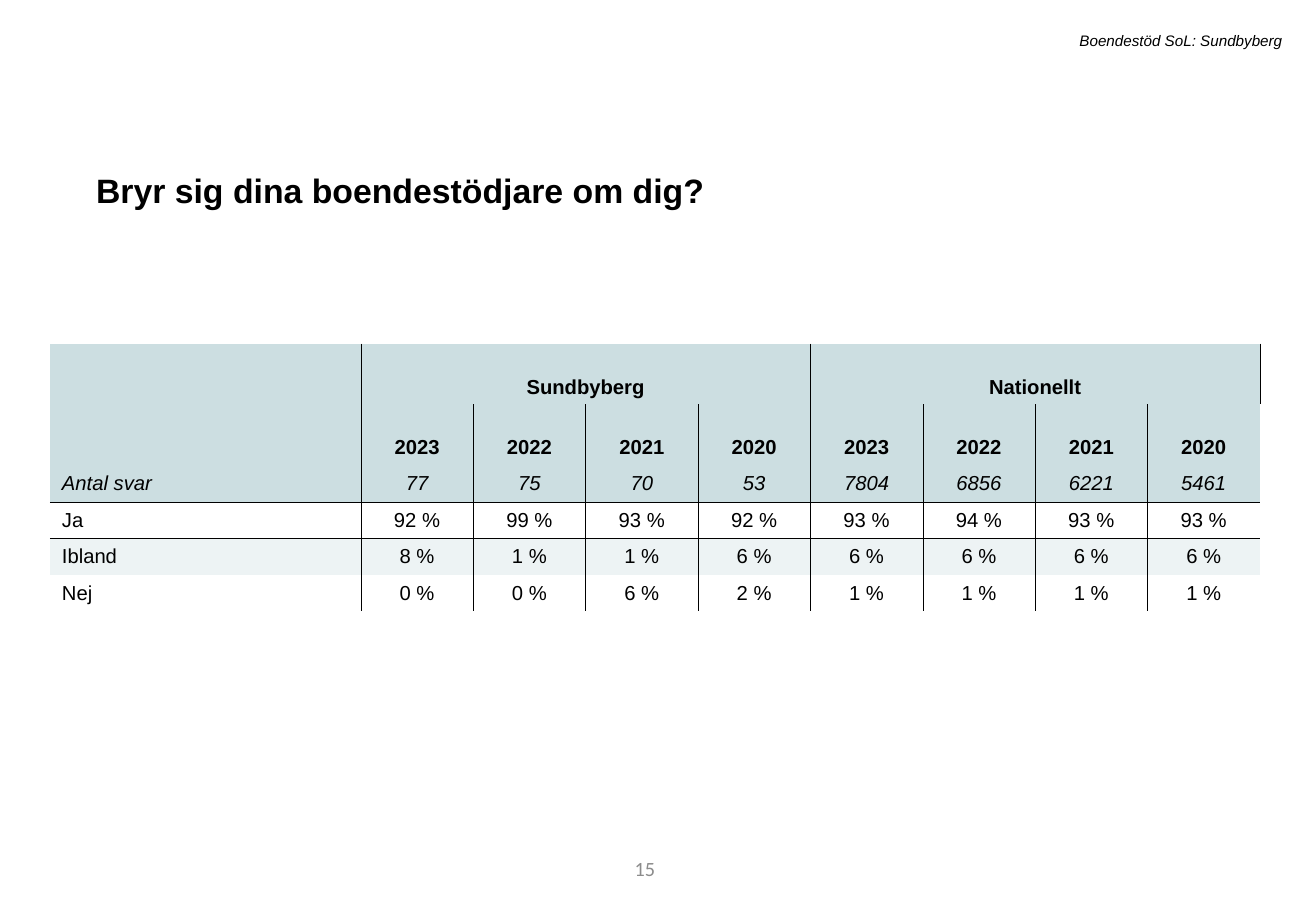
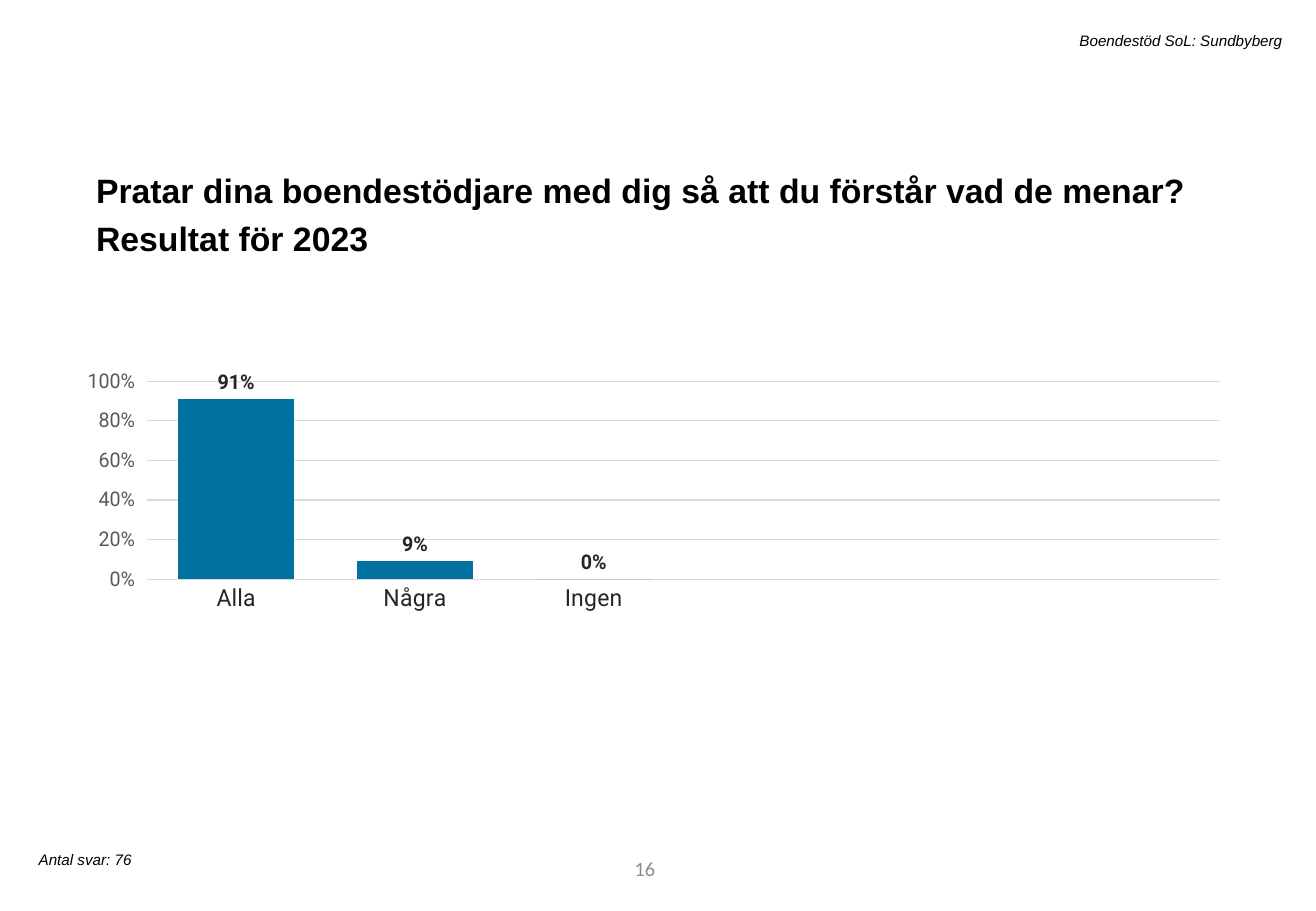
from lxml import etree
from pptx import Presentation
from pptx.chart.data import CategoryChartData
from pptx.dml.color import RGBColor
from pptx.enum.chart import XL_CHART_TYPE, XL_LABEL_POSITION, XL_TICK_MARK
from pptx.enum.text import MSO_ANCHOR, MSO_AUTO_SIZE, PP_ALIGN
from pptx.oxml.ns import qn
from pptx.util import Inches, Pt

COLUMNS = XL_CHART_TYPE.COLUMN_CLUSTERED
OUTSIDE_END = XL_LABEL_POSITION.OUTSIDE_END
NO_TICK, TICK_OUT = XL_TICK_MARK.NONE, XL_TICK_MARK.OUTSIDE
TOP, MIDDLE, BOTTOM = MSO_ANCHOR.TOP, MSO_ANCHOR.MIDDLE, MSO_ANCHOR.BOTTOM
LEFT, CENTER, RIGHT = PP_ALIGN.LEFT, PP_ALIGN.CENTER, PP_ALIGN.RIGHT
NO_AUTOFIT = MSO_AUTO_SIZE.NONE

COLORS = {
    "text": "000000",
    "page": "8C8C8C",
    "header": "CCDEE1",
    "band": "EDF3F4",
    "bar": "0071A1",
    "label": "262626",
    "scale": "595959",
    "grid": "D9D9D9",
}
NO_STYLE = "{2D5ABB26-0587-4C30-8999-92F81FD0307C}"
REPORT = "Boendestöd SoL: Sundbyberg"
YEARS = ["2023", "2022", "2021", "2020"]
REGIONS = ["Sundbyberg", "Nationellt"]
ANSWERS = [
    ["Antal svar", "77", "75", "70", "53", "7804", "6856", "6221", "5461"],
    ["Ja", "92 %", "99 %", "93 %", "92 %", "93 %", "94 %", "93 %", "93 %"],
    ["Ibland", "8 %", "1 %", "1 %", "6 %", "6 %", "6 %", "6 %", "6 %"],
    ["Nej", "0 %", "0 %", "6 %", "2 %", "1 %", "1 %", "1 %", "1 %"],
]


def rgb(name):
    return RGBColor.from_string(COLORS[name])


def set_font(font, size, color="text", name="Arial", bold=False, italic=False):
    font.name, font.size = name, Pt(size)
    font.bold, font.italic = bold, italic
    font.color.rgb = rgb(color)


def place(shape, left, top, width, height):
    shape.left, shape.top = Inches(left), Inches(top)
    shape.width, shape.height = Inches(width), Inches(height)


def add_note(slide, text, box, align=LEFT, anchor=TOP, wrap=True, **font):
    frame = slide.shapes.add_textbox(*map(Inches, box)).text_frame
    frame.word_wrap = wrap
    frame.vertical_anchor = anchor
    paragraph = frame.paragraphs[0]
    paragraph.text = text
    paragraph.alignment = align
    set_font(paragraph.font, **font)


def add_question_slide(prs, question, page):
    slide = prs.slides.add_slide(prs.slide_layouts[5])
    title = slide.shapes.title
    place(title, 0.69, 1.28, 9.4, 0.47)
    frame = title.text_frame
    frame.text = question
    frame.word_wrap = True
    frame.auto_size = NO_AUTOFIT
    frame.vertical_anchor = TOP
    paragraph = frame.paragraphs[0]
    paragraph.alignment = LEFT
    paragraph.line_spacing = 1.2
    paragraph.space_before = Pt(10)
    set_font(paragraph.font, 20, bold=True)
    add_note(slide, REPORT, (1.79, 0.21, 8.86, 0.25), RIGHT, size=9, italic=True)
    add_note(slide, str(page), (3.05, 6.95, 2.44, 0.4), RIGHT, MIDDLE,
             size=12, color="page", name="Calibri")
    return slide


def add_borders(cell, sides):
    properties = cell._tc.get_or_add_tcPr()
    for side in sides:
        line = etree.SubElement(properties, qn(f"a:ln{side}"), w=str(Pt(0.25)))
        fill = etree.SubElement(line, qn("a:solidFill"))
        etree.SubElement(fill, qn("a:srgbClr"), val=COLORS["text"])


def border_sides(row, col, last_col):
    if row == 0:
        return {0: "R", 1: "LR", 1 + len(YEARS): "LR"}.get(col, "")
    sides = ("L" if col > 0 else "") + ("R" if col < last_col else "")
    return sides + {2: "B", 3: "T"}.get(row, "")


def format_cell(cell, row, col, last_col):
    add_borders(cell, border_sides(row, col, last_col))
    fill = "header" if row < 3 else "band" if row == 4 else None
    if fill:
        cell.fill.solid()
        cell.fill.fore_color.rgb = rgb(fill)
    else:
        cell.fill.background()
    cell.vertical_anchor = BOTTOM if row < 2 else MIDDLE
    paragraph = cell.text_frame.paragraphs[0]
    paragraph.alignment = CENTER if col else LEFT
    set_font(paragraph.font, 12, bold=row < 2, italic=row == 2)


def add_answer_table(slide):
    region_row = [""]
    for region in REGIONS:
        region_row += [region] + [""] * (len(YEARS) - 1)
    rows = [region_row, [""] + YEARS * len(REGIONS)] + ANSWERS
    last_col = len(region_row) - 1
    graphic = slide.shapes.add_table(
        len(rows), last_col + 1, Inches(0.41), Inches(2.83), Inches(9.96), Inches(2.2))
    for style in graphic.element.iter(qn("a:tableStyleId")):
        style.text = NO_STYLE
    table = graphic.table
    table.first_row = table.horz_banding = False
    for col, column in enumerate(table.columns):
        column.width = Inches(0.925 if col else 2.56)
    for row, values in enumerate(rows):
        table.rows[row].height = Inches(0.5 if row < 2 else 0.3)
        for col, value in enumerate(values):
            cell = table.cell(row, col)
            cell.text = value
            format_cell(cell, row, col, last_col)
    for start in range(1, last_col, len(YEARS)):
        table.cell(0, start).merge(table.cell(0, start + len(YEARS) - 1))


def set_plot_area(chart, x, y, w, h):
    plot_area = chart._chartSpace.chart.plotArea
    for old in plot_area.findall(qn("c:layout")):
        plot_area.remove(old)
    layout = etree.Element(qn("c:layout"))
    manual = etree.SubElement(layout, qn("c:manualLayout"))
    settings = [("layoutTarget", "inner"), ("xMode", "edge"), ("yMode", "edge"),
                ("x", x), ("y", y), ("w", w), ("h", h)]
    for tag, value in settings:
        etree.SubElement(manual, qn(f"c:{tag}"), val=str(value))
    plot_area.insert(0, layout)


def style_grid_line(line):
    line.color.rgb = rgb("grid")
    line.width = Pt(0.75)


def add_result_chart(slide):
    data = CategoryChartData(number_format="0%")
    data.categories = ["Alla", "Några", "Ingen", "", "", ""]
    data.add_series("Series 1", [0.91, 0.09, 0, None, None, None])
    chart = slide.shapes.add_chart(
        COLUMNS, Inches(0.72), Inches(2.53), Inches(9.4), Inches(3.95), data).chart
    chart.has_legend = chart.has_title = False
    set_font(chart.font, 10, name="Roboto")
    set_plot_area(chart, 0.025, 0.154, 0.966, 0.413)

    plot = chart.plots[0]
    plot.gap_width = 55
    plot.vary_by_categories = False
    bars = plot.series[0].format.fill
    bars.solid()
    bars.fore_color.rgb = rgb("bar")
    plot.has_data_labels = True
    labels = plot.data_labels
    labels.show_value = True
    labels.position = OUTSIDE_END
    labels.number_format = "0%"
    labels.number_format_is_linked = False
    set_font(labels.font, 12, "label", "Roboto", bold=True)

    answers = chart.category_axis
    answers.major_tick_mark = answers.minor_tick_mark = NO_TICK
    style_grid_line(answers.format.line)
    set_font(answers.tick_labels.font, 14, "label", "Roboto")

    shares = chart.value_axis
    shares.minimum_scale, shares.maximum_scale, shares.major_unit = 0, 1, 0.2
    shares.major_tick_mark, shares.minor_tick_mark = TICK_OUT, NO_TICK
    shares.format.line.fill.background()
    style_grid_line(shares.major_gridlines.format.line)
    shares.tick_labels.number_format = "0%"
    shares.tick_labels.number_format_is_linked = False
    set_font(shares.tick_labels.font, 12, "scale", "Roboto")


def main():
    prs = Presentation()
    prs.slide_width, prs.slide_height = Inches(10.83), Inches(7.5)

    care = add_question_slide(prs, "Bryr sig dina boendestödjare om dig?", 15)
    add_answer_table(care)

    clarity = add_question_slide(
        prs,
        "Pratar dina boendestödjare med dig så att du förstår vad de menar? "
        "Resultat för 2023",
        16)
    add_result_chart(clarity)
    add_note(clarity, "Antal svar: 76", (0.22, 6.95, 2.84, 0.25), wrap=False,
             size=9, italic=True)

    prs.save("out.pptx")


if __name__ == "__main__":
    main()
